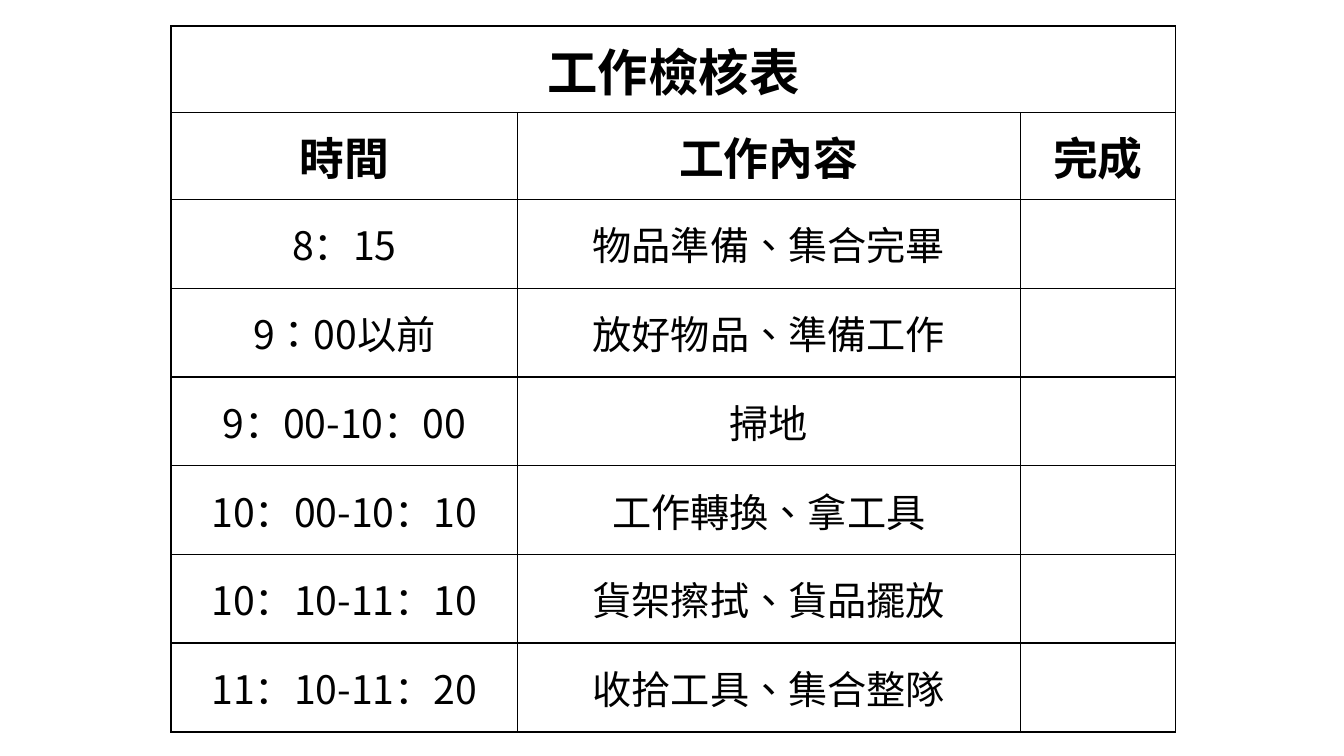
from lxml import etree
from pptx import Presentation
from pptx import util as u
from pptx.dml.color import RGBColor
from pptx.enum import text
from pptx.oxml import ns

BLACK = "000000"
CJK_FONT = "Noto Sans CJK SC"
THIN, THICK = 1, 1.5

COLUMN_WIDTHS = [3.43, 4.99, 1.54]
HEADER_HEIGHT, TASK_HEIGHT = 0.86, 0.88
ROWS = [
    ("工作檢核表", "", ""),
    ("時間", "工作內容", "完成"),
    ("8：15", "物品準備、集合完畢", ""),
    ("9：00以前", "放好物品、準備工作", ""),
    ("9：00-10：00", "掃地", ""),
    ("10：00-10：10", "工作轉換、拿工具", ""),
    ("10：10-11：10", "貨架擦拭、貨品擺放", ""),
    ("11：10-11：20", "收拾工具、集合整隊", ""),
]


def set_borders(cell, widths):
    """Draw black cell edges; widths maps lnL, lnR, lnT and lnB to points."""
    properties = cell._tc.get_or_add_tcPr()
    for index, (edge, width) in enumerate(widths.items()):
        line = etree.Element(ns.qn(f"a:{edge}"), w=str(u.Pt(width)))
        fill = etree.SubElement(line, ns.qn("a:solidFill"))
        etree.SubElement(fill, ns.qn("a:srgbClr"), val=BLACK)
        properties.insert(index, line)


def write(cell, words, size, font_name, bold):
    cell.text_frame.text = words
    para = cell.text_frame.paragraphs[0]
    para.alignment = text.PP_ALIGN.CENTER
    for span in para.runs:
        span.font.size = u.Pt(size)
        span.font.name = font_name
        span.font.bold = bold
        span.font.color.rgb = RGBColor.from_string(BLACK)
        properties = span.font._element
        has_chinese = any("\u4e00" <= letter <= "\u9fff" for letter in words)
        properties.set("lang", "zh-TW" if has_chinese else "en-US")
        etree.SubElement(properties, ns.qn("a:ea"), typeface=CJK_FONT)


deck = Presentation()
deck.slide_width = u.Inches(13.33)
deck.slide_height = u.Inches(7.5)
page = deck.slides.add_slide(deck.slide_layouts[6])

row_heights = [HEADER_HEIGHT] * 2 + [TASK_HEIGHT] * (len(ROWS) - 2)
checklist = page.shapes.add_table(
    len(ROWS), len(COLUMN_WIDTHS), u.Inches(1.7), u.Inches(0.26),
    u.Inches(sum(COLUMN_WIDTHS)), u.Inches(sum(row_heights))).table
checklist.first_row = False
checklist.horz_banding = False
for column, width in zip(checklist.columns, COLUMN_WIDTHS):
    column.width = u.Inches(width)
for row, height in zip(checklist.rows, row_heights):
    row.height = u.Inches(height)

last_row, last_column = len(ROWS) - 1, len(COLUMN_WIDTHS) - 1
for r, row_words in enumerate(ROWS):
    for c, words in enumerate(row_words):
        cell = checklist.cell(r, c)
        cell.fill.background()
        cell.vertical_anchor = text.MSO_ANCHOR.MIDDLE
        cell.margin_left = cell.margin_right = u.Inches(0.07)
        cell.margin_top = cell.margin_bottom = 0
        set_borders(cell, {
            "lnL": THICK if c == 0 else THIN,
            "lnR": THICK if c == last_column else THIN,
            "lnT": THICK if r == 0 else THIN,
            "lnB": THICK if r == last_row else THIN,
        })
        if words:
            is_header = r < 2
            size = {0: 36, 1: 32}.get(r, 28)
            write(cell, words, size, "Calibri" if is_header else CJK_FONT, is_header)

checklist.cell(0, 0).merge(checklist.cell(0, last_column))
set_borders(checklist.cell(0, 0), {})
deck.save("out.pptx")
